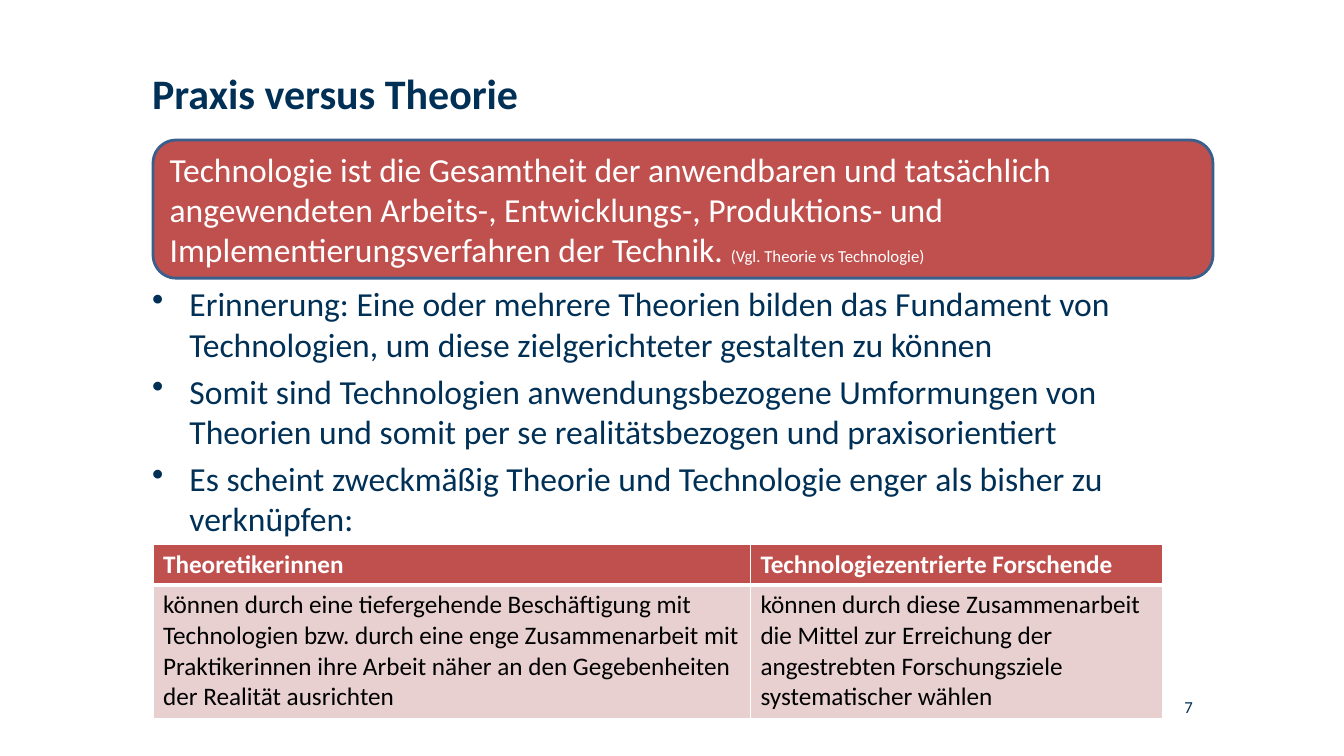
from lxml import etree
from pptx import Presentation
from pptx.dml.color import RGBColor
from pptx.enum.shapes import MSO_SHAPE
from pptx.enum.text import MSO_ANCHOR, PP_ALIGN
from pptx.oxml.ns import qn
from pptx.util import Inches, Pt

ROUND = MSO_SHAPE.ROUNDED_RECTANGLE
MIDDLE = MSO_ANCHOR.MIDDLE
LEFT, RIGHT = PP_ALIGN.LEFT, PP_ALIGN.RIGHT
NAVY = RGBColor(0x00, 0x30, 0x56)
RED = RGBColor(0xC0, 0x50, 0x4D)
PINK = RGBColor(0xE8, 0xD0, 0xD0)
EDGE = RGBColor(0x3A, 0x5F, 0x8C)
WHITE = RGBColor(0xFF, 0xFF, 0xFF)
BLACK = RGBColor(0x00, 0x00, 0x00)
WIDTH, HEIGHT = Inches(13.34), Inches(7.5)

QUOTE = (
    "Technologie ist die Gesamtheit der anwendbaren und tatsächlich "
    "angewendeten Arbeits-, Entwicklungs-, Produktions- und "
    "Implementierungsverfahren der Technik. "
)
NOTE = "(Vgl. Theorie vs Technologie)"
POINTS = [
    "Erinnerung: Eine oder mehrere Theorien bilden das Fundament von "
    "Technologien, um diese zielgerichteter gestalten zu können",
    "Somit sind Technologien anwendungsbezogene Umformungen von "
    "Theorien und somit per se realitätsbezogen und praxisorientiert",
    "Es scheint zweckmäßig Theorie und Technologie enger als bisher zu "
    "verknüpfen:",
]
ROWS = [
    ["Theoretikerinnen", "Technologiezentrierte Forschende"],
    [
        "können durch eine tiefergehende Beschäftigung mit Technologien "
        "bzw. durch eine enge Zusammenarbeit mit Praktikerinnen ihre Arbeit "
        "näher an den Gegebenheiten der Realität ausrichten",
        "können durch diese Zusammenarbeit die Mittel zur Erreichung der "
        "angestrebten Forschungsziele systematischer wählen",
    ],
]


def across(share):
    """Turn a percentage of the slide's width into a length."""
    return int(WIDTH * share / 100)


def down(share):
    """Turn a percentage of the slide's height into a length."""
    return int(HEIGHT * share / 100)


def area(left, top, width, height):
    """Turn four percentages into a place on the slide."""
    return across(left), down(top), across(width), down(height)


def style(para, size, color, bold=False, align=LEFT):
    """Set the font and alignment of a paragraph."""
    font = para.font
    font.name, font.size, font.bold = "Calibri", Pt(size), bold
    font.color.rgb = color
    para.alignment = align


def add_text(slide, place, lines, size, bold=False, align=LEFT):
    """Add a text box without margins and return its paragraphs."""
    frame = slide.shapes.add_textbox(*place).text_frame
    frame.word_wrap = True
    frame.margin_left = frame.margin_right = 0
    frame.margin_top = frame.margin_bottom = 0
    frame.text = "\n".join(lines)
    for para in frame.paragraphs:
        style(para, size, NAVY, bold, align)
    return frame.paragraphs


def add_list(slide, place, lines):
    """Add a bulleted list."""
    for para in add_text(slide, place, lines, 24):
        para.space_before = Pt(4.8)
        props = para._p.get_or_add_pPr()
        props.set("marL", str(Inches(0.37)))
        props.set("indent", str(-Inches(0.37)))
        bullet = etree.Element(qn("a:buChar"), char="•")
        props.find(qn("a:defRPr")).addprevious(bullet)


def add_quote(slide, place):
    """Add the rounded box with the definition and its small note."""
    box = slide.shapes.add_shape(ROUND, *place)
    box.shadow.inherit = False
    box.fill.solid()
    box.fill.fore_color.rgb = RED
    box.line.color.rgb = EDGE
    box.line.width = Pt(2)
    frame = box.text_frame
    frame.word_wrap = True
    frame.vertical_anchor = MIDDLE
    para = frame.paragraphs[0]
    style(para, 24, WHITE)
    for text, size in ((QUOTE, 24), (NOTE, 12)):
        run = para.add_run()
        run.text = text
        run.font.size = Pt(size)
        run.font.color.rgb = WHITE


def add_edge(cell, side, width):
    """Draw one white border of a cell."""
    props = cell._tc.get_or_add_tcPr()
    line = etree.SubElement(props, qn(f"a:ln{side}"), w=str(Pt(width)))
    fill = etree.SubElement(line, qn("a:solidFill"))
    etree.SubElement(fill, qn("a:srgbClr"), val=str(WHITE))


def add_grid(slide, place, widths, heights):
    """Add the table with a red header above a pink row."""
    table = slide.shapes.add_table(len(ROWS), len(widths), *place).table
    table.horz_banding = False
    for col, width in zip(table.columns, widths):
        col.width = across(width)
    for row, height in zip(table.rows, heights):
        row.height = down(height)
    for i, texts in enumerate(ROWS):
        head = i == 0
        edges = {"L": 1, "R": 1, "T": 1 if head else 3, "B": 3 if head else 1}
        for j, text in enumerate(texts):
            cell = table.cell(i, j)
            for side, width in edges.items():
                add_edge(cell, side, width)
            cell.fill.solid()
            cell.fill.fore_color.rgb = RED if head else PINK
            cell.text = text
            style(cell.text_frame.paragraphs[0], 18,
                  WHITE if head else BLACK, head)


def main():
    """Build the slide and save it."""
    deck = Presentation()
    deck.slide_width, deck.slide_height = WIDTH, HEIGHT
    slide = deck.slides.add_slide(deck.slide_layouts[6])
    add_text(slide, area(11.32, 8.93, 52.92, 18.27),
             ["Praxis versus Theorie"], 30, bold=True)
    add_list(slide, area(11.32, 37.47, 77.29, 36), POINTS)
    add_text(slide, area(77.21, 92.13, 11.54, 2.67), ["7"], 12, align=RIGHT)
    add_quote(slide, area(11.39, 18.53, 78.86, 18.27))
    add_grid(slide, area(11.39, 72, 75.11, 23), (44.45, 30.66), (5.3, 17.7))
    deck.save("out.pptx")


if __name__ == "__main__":
    main()
